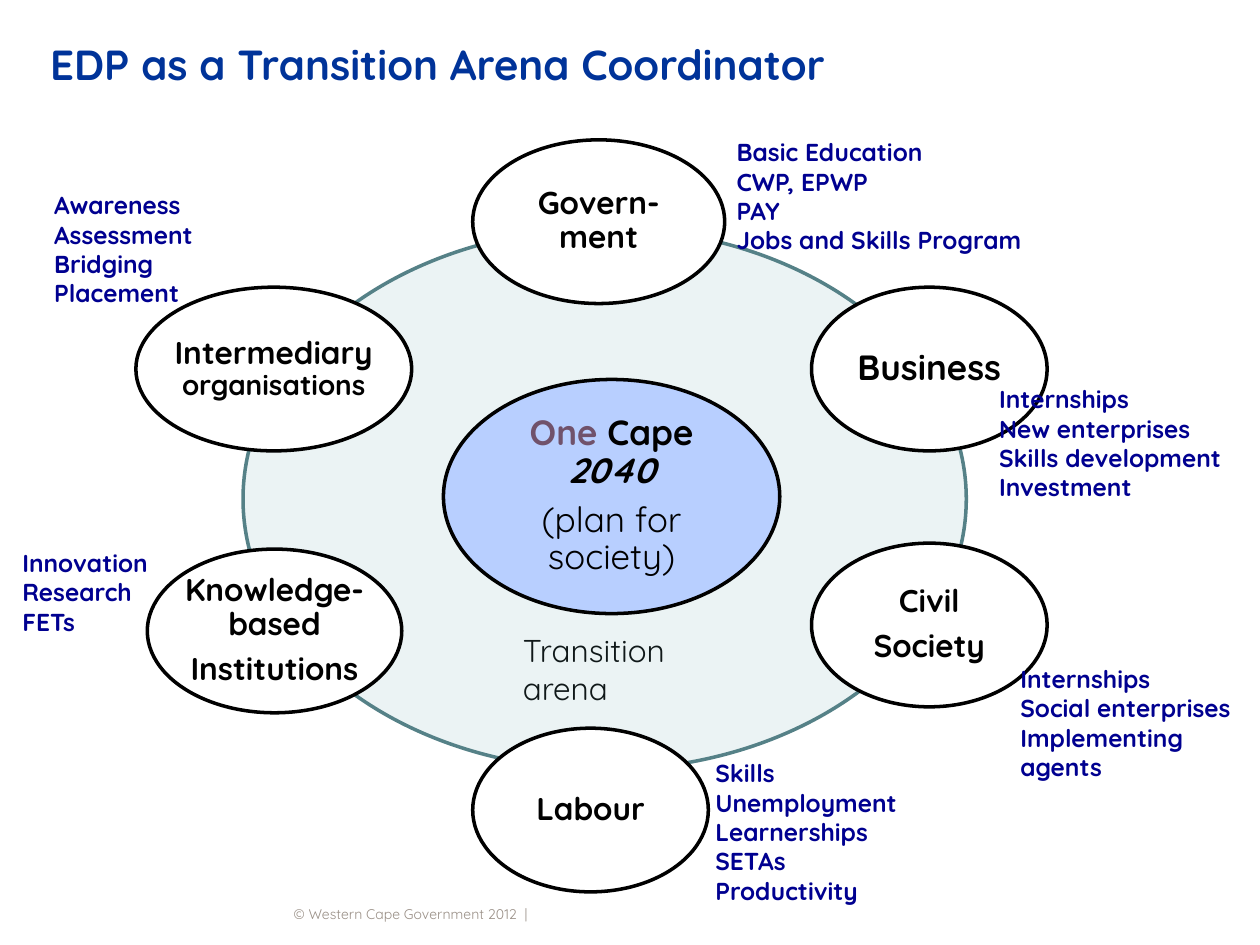
from lxml.etree import SubElement
from pptx import Presentation
from pptx.dml.color import RGBColor
from pptx.enum.shapes import MSO_SHAPE as Shape
from pptx.enum.text import MSO_ANCHOR as Anchor, PP_ALIGN as Align
from pptx.oxml.ns import qn
from pptx.util import Cm, Pt

FONT = "Quicksand"
BLACK, WHITE, NAVY = "000000", "FFFFFF", "000090"
STAKEHOLDER_HEIGHT = 3.3

# Left, top, width in cm, text size, paragraphs of lines
STAKEHOLDERS = [
    (9.53, 2.82, 5.08, 18, [["Govern-", "ment"]]),
    (16.36, 5.79, 4.75, 20, [["Business"]]),
    (16.36, 10.95, 4.75, 18, [["Civil"], ["Society"]]),
    (9.53, 14.68, 4.75, 18, [["Labour"]]),
    (2.97, 11.07, 5.13, 18, [["Knowledge-", "based"], ["Institutions"]]),
]

# Left, top, width, height in cm, lines
CONTRIBUTIONS = [
    (14.6, 2.64, 7.24, 2.64,
     ["Basic Education", "CWP, EPWP", "PAY", "Jobs and Skills Program"]),
    (0.2, 10.92, 4.01, 2.06, ["Innovation", "Research", "FETs"]),
    (14.17, 15.16, 4.83, 3.25,
     ["Skills", "Unemployment", "Learnerships", "SETAs", "Productivity"]),
    (19.89, 7.62, 5.97, 3.84,
     ["Internships", "New enterprises", "Skills development", "Investment"]),
    (0.84, 3.71, 3.99, 2.64,
     ["Awareness", "Assessment", "Bridging", "Placement"]),
    (20.32, 13.26, 5.08, 2.64,
     ["Internships", "Social enterprises", "Implementing agents"]),
]


def color(hex_value):
    return RGBColor.from_string(hex_value)


def add_run(paragraph, text, size, hex_value=BLACK, bold=False, italic=False):
    run = paragraph.add_run()
    run.text = text
    font = run.font
    font.name, font.size = FONT, Pt(size)
    font.bold, font.italic = bold, italic
    font.color.rgb = color(hex_value)


def next_paragraph(frame, index):
    return frame.paragraphs[0] if index == 0 else frame.add_paragraph()


def add_ellipse(slide, box, fill, line=BLACK):
    shape = slide.shapes.add_shape(Shape.OVAL, *map(Cm, box))
    shape.shadow.inherit = False
    shape.fill.solid()
    shape.fill.fore_color.rgb = color(fill)
    shape.line.color.rgb = color(line)
    shape.line.width = Pt(2)
    return shape


def fill_ellipse(shape, paragraphs):
    """Centre paragraphs made of lines; a line is a list of add_run arguments."""
    frame = shape.text_frame
    frame.word_wrap = False
    frame.vertical_anchor = Anchor.MIDDLE
    frame.margin_left = frame.margin_right = 0
    frame.margin_top = frame.margin_bottom = 0
    for index, lines in enumerate(paragraphs):
        paragraph = next_paragraph(frame, index)
        paragraph.alignment = Align.CENTER
        paragraph.line_spacing = 0.9
        paragraph.space_after = Pt(6)
        for number, runs in enumerate(lines):
            if number:
                paragraph.add_line_break()
            for run in runs:
                add_run(paragraph, *run)


def add_text(slide, box, lines, size, hex_value, bold=False):
    frame = slide.shapes.add_textbox(*map(Cm, box)).text_frame
    frame.word_wrap = True
    for index, line in enumerate(lines):
        add_run(next_paragraph(frame, index), line, size, hex_value, bold)
    return frame


def set_title(slide, text):
    title = slide.shapes.title
    title.left, title.top, title.width, title.height = map(
        Cm, (0.81, 0.51, 23.88, 1.55))
    frame = title.text_frame
    frame.word_wrap = True
    frame.vertical_anchor = Anchor.MIDDLE
    frame.margin_left = frame.margin_right = Cm(0.2)
    frame.paragraphs[0].alignment = Align.LEFT
    add_run(frame.paragraphs[0], text, 24, "003399", True)


def add_footer(slide):
    frame = add_text(slide, (5.72, 17.96, 5.41, 0.64),
                     ["© Western Cape Government 2012  |"], 8, "998F86")
    frame.vertical_anchor = Anchor.BOTTOM
    frame.margin_left = Cm(0.2)
    frame.margin_right = frame.margin_bottom = 0


def add_arena(slide):
    add_text(slide, (10.29, 12.6, 4.14, 1.8), ["Transition arena"], 18, BLACK)
    arena = add_ellipse(slide, (4.9, 4.6, 14.58, 10.92), "73AFB6", "558187")
    fill_color = arena.fill._xPr.find(qn("a:solidFill"))[0]
    SubElement(fill_color, qn("a:alpha"), val="14000")


def add_hub(slide):
    hub = add_ellipse(slide, (8.94, 7.65, 6.78, 4.72), "B8CFFF")
    fill_ellipse(hub, [
        [[("One", 20, "70526B", True), (" Cape", 20, BLACK, True)],
         [("2040", 20, BLACK, True, True)]],
        [[("(plan for", 20)], [("society)", 20)]],
    ])


def add_stakeholders(slide):
    for left, top, width, size, paragraphs in STAKEHOLDERS:
        shape = add_ellipse(slide, (left, top, width, STAKEHOLDER_HEIGHT), WHITE)
        fill_ellipse(shape, [[[(line, size, BLACK, True)] for line in lines]
                             for lines in paragraphs])
    intermediary = add_ellipse(slide, (2.74, 5.79, 5.56, STAKEHOLDER_HEIGHT), WHITE)
    fill_ellipse(intermediary, [[[("Intermediary", 18, BLACK, True)],
                                 [("organisations", 16, BLACK, True)]]])


def main():
    presentation = Presentation()
    presentation.slide_width, presentation.slide_height = Cm(25.4), Cm(19.05)
    slide = presentation.slides.add_slide(presentation.slide_layouts[5])
    add_footer(slide)
    set_title(slide, "EDP as a Transition Arena Coordinator")
    add_arena(slide)
    add_hub(slide)
    add_stakeholders(slide)
    for *box, lines in CONTRIBUTIONS:
        add_text(slide, box, lines, 14, NAVY, True)
    presentation.save("out.pptx")


if __name__ == "__main__":
    main()
